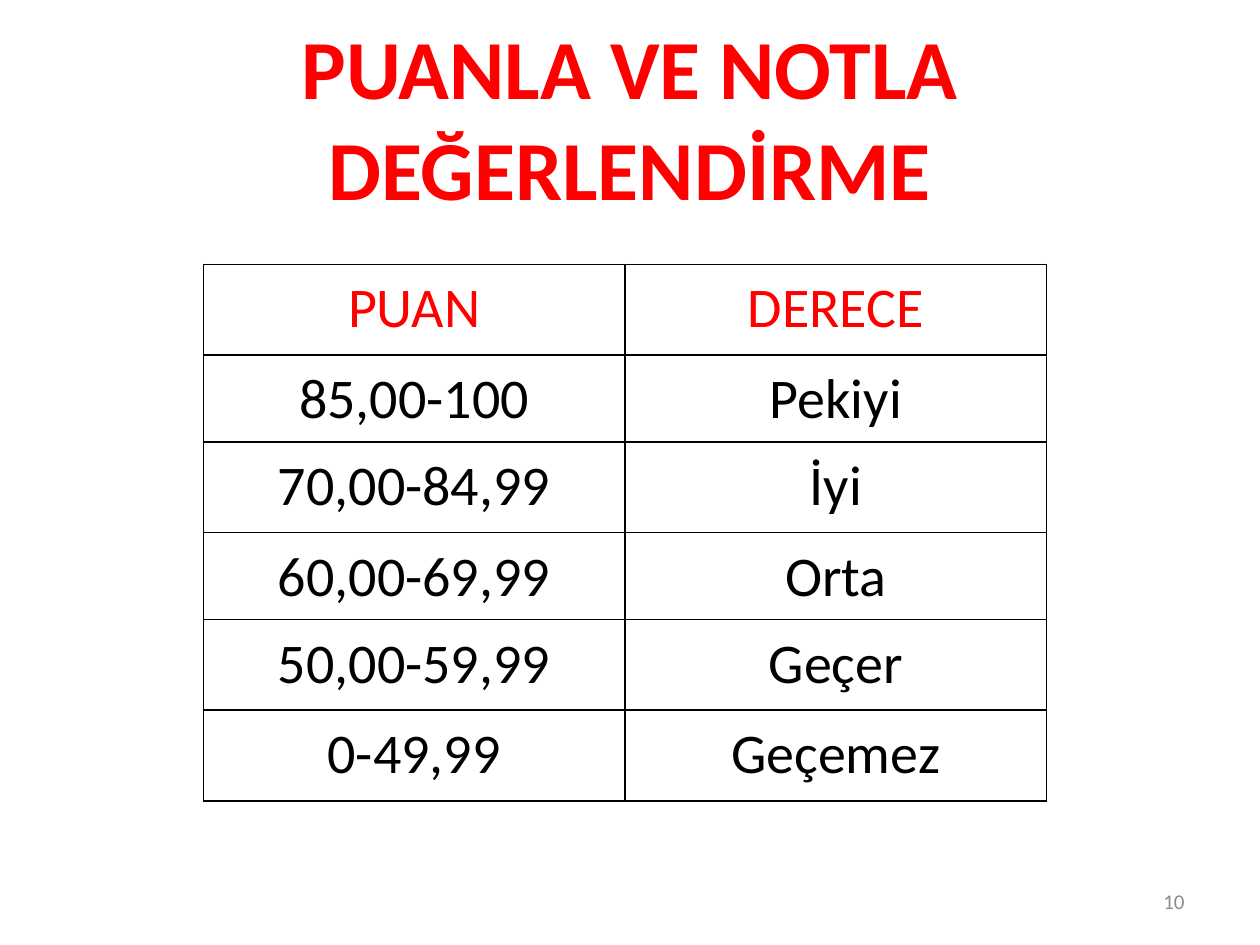
from dataclasses import dataclass

from lxml import etree
from pptx import Presentation
from pptx.dml.color import RGBColor
from pptx.enum.text import MSO_ANCHOR, PP_ALIGN
from pptx.oxml.ns import qn
from pptx.util import Pt

CENTER, RIGHT = PP_ALIGN.CENTER, PP_ALIGN.RIGHT
MIDDLE = MSO_ANCHOR.MIDDLE
BLANK_LAYOUT = 6


@dataclass(frozen=True)
class Theme:
    font: str = "Calibri"
    red: str = "FF0000"
    black: str = "000000"
    gray: str = "8C8C8C"
    title_size: float = 48
    table_size: float = 32
    number_size: float = 12
    border_width: float = 1
    cell_line_spacing: float = 1.15


@dataclass(frozen=True)
class Box:
    left: float
    top: float
    width: float
    height: float

    def lengths(self) -> tuple:
        return Pt(self.left), Pt(self.top), Pt(self.width), Pt(self.height)


@dataclass(frozen=True)
class Grade:
    score: str
    degree: str
    row_height: float


THEME = Theme()
TITLE_BOX = Box(36, 21.6, 648, 90)
NUMBER_BOX = Box(516, 500.5, 168, 28.8)
TABLE_BOX = Box(116.2, 151.1, 482, 306.4)
TITLE_LINES = ["PUANLA VE NOTLA", "DEĞERLENDİRME"]
TALL, SHORT = 51.8, 49.7
GRADES = [
    Grade("PUAN", "DERECE", TALL),
    Grade("85,00-100", "Pekiyi", SHORT),
    Grade("70,00-84,99", "İyi", TALL),
    Grade("60,00-69,99", "Orta", SHORT),
    Grade("50,00-59,99", "Geçer", TALL),
    Grade("0-49,99", "Geçemez", TALL),
]


def add_run(paragraph, text: str, size: float, color: str, bold: bool = False) -> None:
    run = paragraph.add_run()
    run.text = text
    run.font.name = THEME.font
    run.font.size = Pt(size)
    run.font.bold = bold
    run.font.color.rgb = RGBColor.from_string(color)


def add_text(slide, box: Box, lines: list[str], alignment, size: float,
             color: str, bold: bool = False) -> None:
    frame = slide.shapes.add_textbox(*box.lengths()).text_frame
    frame.word_wrap = True
    frame.vertical_anchor = MIDDLE
    paragraph = frame.paragraphs[0]
    paragraph.alignment = alignment
    for index, line in enumerate(lines):
        if index:
            paragraph.add_line_break()
        add_run(paragraph, line, size, color, bold)


def add_borders(cell) -> None:
    """Draw all four edges; they must precede the fill in the cell properties."""
    properties = cell._tc.get_or_add_tcPr()
    for position, edge in enumerate(("a:lnL", "a:lnR", "a:lnT", "a:lnB")):
        line = etree.Element(qn(edge), w=str(Pt(THEME.border_width)))
        fill = etree.SubElement(line, qn("a:solidFill"))
        etree.SubElement(fill, qn("a:srgbClr"), val=THEME.black)
        properties.insert(position, line)


def fill_cell(cell, text: str, color: str) -> None:
    cell.fill.background()
    add_borders(cell)
    cell.margin_left = cell.margin_right = Pt(5)
    cell.margin_top = cell.margin_bottom = Pt(0)
    paragraph = cell.text_frame.paragraphs[0]
    paragraph.alignment = CENTER
    paragraph.line_spacing = THEME.cell_line_spacing
    add_run(paragraph, text, THEME.table_size, color)


def add_grade_table(slide, box: Box, grades: list[Grade]) -> None:
    table = slide.shapes.add_table(len(grades), 2, *box.lengths()).table
    table.first_row = False
    table.horz_banding = False
    for index, grade in enumerate(grades):
        table.rows[index].height = Pt(grade.row_height)
        color = THEME.black if index else THEME.red
        for column, text in enumerate((grade.score, grade.degree)):
            fill_cell(table.cell(index, column), text, color)


def main() -> None:
    presentation = Presentation()
    presentation.slide_width = Pt(720)
    presentation.slide_height = Pt(540)
    slide = presentation.slides.add_slide(presentation.slide_layouts[BLANK_LAYOUT])
    add_text(slide, TITLE_BOX, TITLE_LINES, CENTER, THEME.title_size, THEME.red, bold=True)
    add_grade_table(slide, TABLE_BOX, GRADES)
    add_text(slide, NUMBER_BOX, ["10"], RIGHT, THEME.number_size, THEME.gray)
    presentation.save("out.pptx")


if __name__ == "__main__":
    main()
